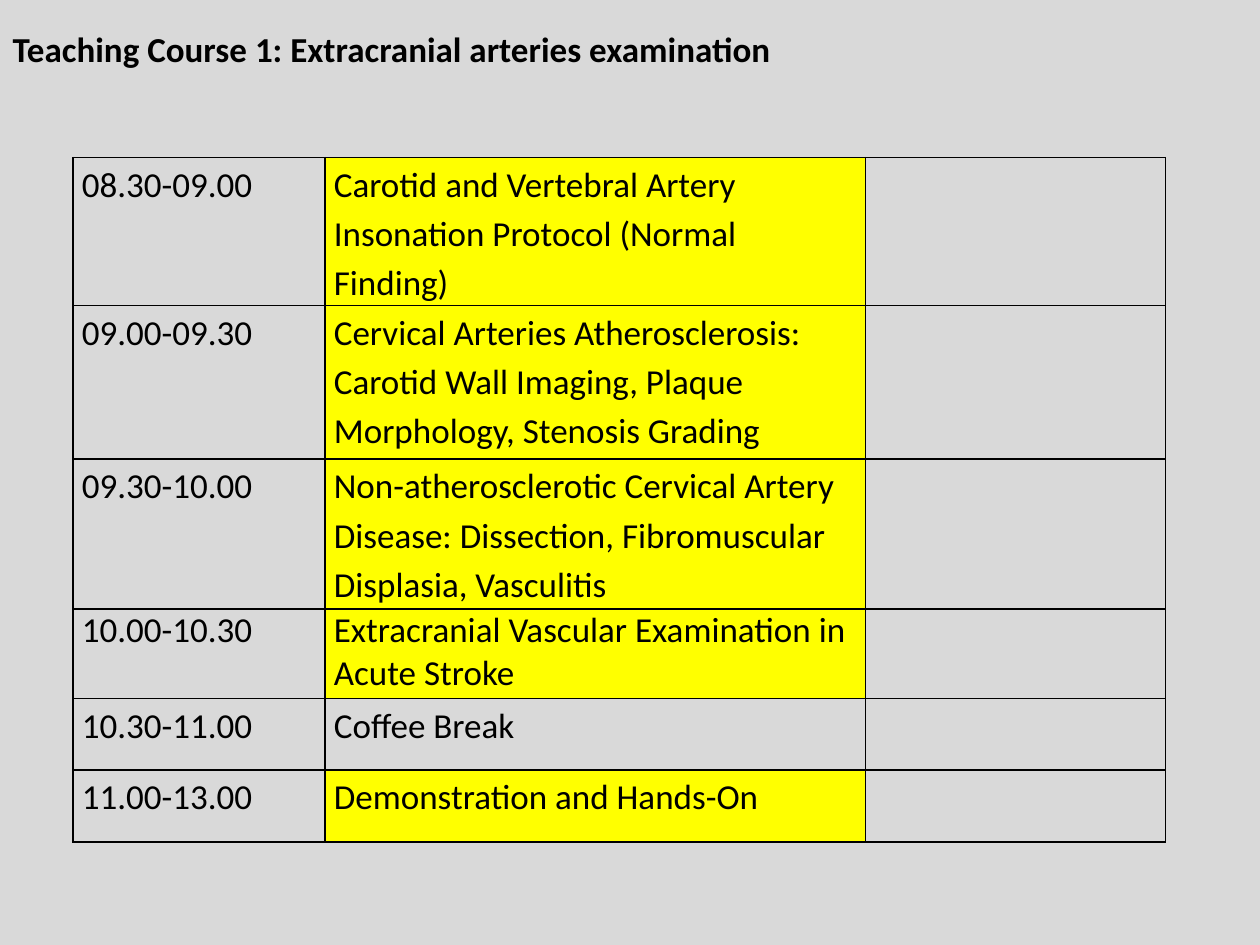
from lxml.etree import SubElement
from pptx import Presentation
from pptx.dml.color import RGBColor
from pptx.enum.text import MSO_ANCHOR, PP_ALIGN
from pptx.oxml.ns import qn
from pptx.util import Inches, Pt

BLACK = "000000"
GRAY = "D9D9D9"
YELLOW = "FFFF00"

COLUMN_WIDTHS = [2, 4.29, 2.38]
PROGRAMME = [
    ("08.30-09.00", "Carotid and Vertebral Artery Insonation Protocol (Normal Finding)", 1.17, 1.15, YELLOW),
    ("09.00-09.30", "Cervical Arteries Atherosclerosis: Carotid Wall Imaging, Plaque Morphology, Stenosis Grading",
     1.22, 1.15, YELLOW),
    ("09.30-10.00", "Non-atherosclerotic Cervical Artery Disease: Dissection, Fibromuscular Displasia, Vasculitis",
     1.19, 1.15, YELLOW),
    ("10.00-10.30", "Extracranial Vascular Examination in Acute Stroke", 0.71, 1.0, YELLOW),
    ("10.30-11.00", "Coffee Break", 0.57, 1.15, None),
    ("11.00-13.00", "Demonstration and Hands-On", 0.57, 1.15, YELLOW),
]


def set_color(target, color):
    if hasattr(target, "solid"):
        target.solid()
        target = target.fore_color
    target.rgb = RGBColor.from_string(color)


def write_text(text_frame, text, size=20, bold=False, color=BLACK, line_spacing=1.0):
    paragraph = text_frame.paragraphs[0]
    paragraph.alignment = PP_ALIGN.LEFT
    paragraph.line_spacing = line_spacing
    run = paragraph.add_run()
    run.text = text
    run.font.name = "Calibri"
    run.font.size = Pt(size)
    run.font.bold = bold
    set_color(run.font.color, color)


def draw_borders(cell, color=BLACK, width=1):
    properties = cell._tc.get_or_add_tcPr()
    for side in ("lnL", "lnR", "lnT", "lnB"):
        line = SubElement(properties, qn(f"a:{side}"), w=str(Pt(width)))
        fill = SubElement(line, qn("a:solidFill"))
        SubElement(fill, qn("a:srgbClr"), val=color)


def format_cell(cell, fill):
    cell.margin_left = cell.margin_right = Inches(0.07)
    cell.margin_top = cell.margin_bottom = 0
    draw_borders(cell)
    if fill:
        set_color(cell.fill, fill)
    else:
        cell.fill.background()


def place_title(slide, left, top, width, height):
    title = slide.shapes.title
    title.left, title.top = Inches(left), Inches(top)
    title.width, title.height = Inches(width), Inches(height)
    title.text_frame.word_wrap = True
    title.text_frame.vertical_anchor = MSO_ANCHOR.TOP
    write_text(title.text_frame, "Teaching Course 1: Extracranial arteries examination", bold=True)


def place_programme(slide, left, top, width, height):
    table = slide.shapes.add_table(
        len(PROGRAMME), len(COLUMN_WIDTHS), Inches(left), Inches(top), Inches(width), Inches(height)
    ).table
    table.first_row = table.horz_banding = False
    for column, column_width in zip(table.columns, COLUMN_WIDTHS):
        column.width = Inches(column_width)
    for row, (time, topic, row_height, line_spacing, topic_fill) in zip(table.rows, PROGRAMME):
        row.height = Inches(row_height)
        for cell, fill in zip(row.cells, (None, topic_fill, None)):
            format_cell(cell, fill)
        for cell, text in zip(row.cells, (time, topic)):
            write_text(cell.text_frame, text, line_spacing=line_spacing)


def main():
    presentation = Presentation()
    presentation.slide_width, presentation.slide_height = Inches(10), Inches(7.5)
    slide = presentation.slides.add_slide(presentation.slide_layouts[5])
    set_color(slide.background.fill, GRAY)
    place_programme(slide, 0.58, 1.25, sum(COLUMN_WIDTHS), sum(row[2] for row in PROGRAMME))
    place_title(slide, 0, 0.17, 6.27, 0.77)
    presentation.save("out.pptx")


if __name__ == "__main__":
    main()
